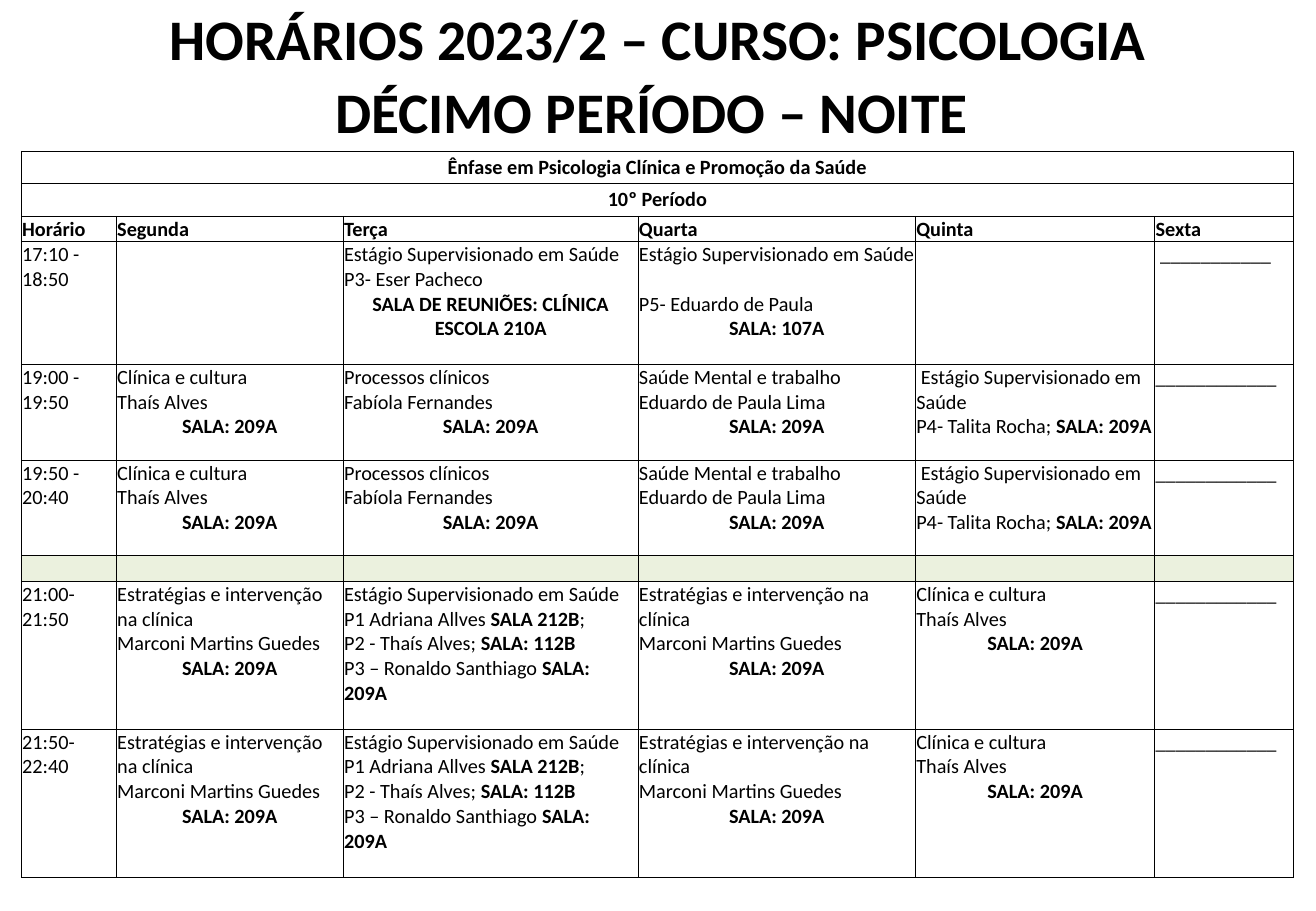
from dataclasses import dataclass

from lxml import etree
from pptx import Presentation
from pptx.dml.color import RGBColor
from pptx.enum import text
from pptx.oxml import ns
from pptx.util import Pt


@dataclass(frozen=True)
class Theme:
    font: str = "Calibri"
    ink: RGBColor = RGBColor(0, 0, 0)
    pause: RGBColor = RGBColor(0xEB, 0xF1, 0xDE)
    title_size: float = 34
    cell_size: float = 12
    border: float = 0.5
    banner_insets: tuple = (4.5, 2.2, 4.5, 2.2)
    cell_insets: tuple = (0.5, 0.5, 0.5, 0)


class TimetableSlide:
    def __init__(self, deck, theme):
        self.theme = theme
        self.slide = deck.slides.add_slide(deck.slide_layouts[5])

    def style(self, run, size, bold):
        font = run.font
        font.name, font.size, font.bold = self.theme.font, Pt(size), bold
        font.color.rgb = self.theme.ink

    def title(self, lines, left, top, width, height):
        heading = self.slide.shapes.title
        heading.left, heading.top = Pt(left), Pt(top)
        heading.width, heading.height = Pt(width), Pt(height)
        frame = heading.text_frame
        frame.text = "\n".join(lines)
        frame.word_wrap = True
        frame.auto_size = text.MSO_AUTO_SIZE.NONE
        frame.vertical_anchor = text.MSO_ANCHOR.MIDDLE
        for paragraph in frame.paragraphs:
            paragraph.alignment = text.PP_ALIGN.CENTER
            paragraph.line_spacing = 0.9
            paragraph.space_before, paragraph.space_after = Pt(0), Pt(6)
            for run in paragraph.runs:
                self.style(run, self.theme.title_size, True)

    def table(self, left, top, widths, heights):
        grid = self.slide.shapes.add_table(
            len(heights), len(widths), Pt(left), Pt(top),
            Pt(sum(widths)), Pt(sum(heights))).table
        grid.first_row = grid.horz_banding = False
        for column, width in zip(grid.columns, widths):
            column.width = Pt(width)
        for row, height in zip(grid.rows, heights):
            row.height = Pt(height)
        for cell in grid.iter_cells():
            cell.fill.background()
            self.borders(cell)
            self.insets(cell, self.theme.cell_insets)
        return grid

    def insets(self, cell, sides):
        (cell.margin_left, cell.margin_top,
         cell.margin_right, cell.margin_bottom) = map(Pt, sides)

    def borders(self, cell):
        properties = cell._tc.get_or_add_tcPr()
        for place, side in enumerate(("lnL", "lnR", "lnT", "lnB")):
            line = etree.Element(ns.qn(f"a:{side}"), w=str(Pt(self.theme.border)))
            fill = etree.SubElement(line, ns.qn("a:solidFill"))
            etree.SubElement(fill, ns.qn("a:srgbClr"), val=str(self.theme.ink))
            properties.insert(place, line)

    def cell(self, cell, lines, align=text.PP_ALIGN.LEFT):
        """Write paragraphs; asterisks enclose bold words, room lines are centred."""
        size = self.theme.cell_size
        frame = cell.text_frame
        for number, line in enumerate(lines):
            paragraph = frame.add_paragraph() if number else frame.paragraphs[0]
            is_room = line.startswith("*SALA")
            paragraph.alignment = text.PP_ALIGN.CENTER if is_room else align
            plain, *others = line.split("*")
            paragraph.text = plain
            for run in paragraph.runs:
                self.style(run, size, False)
            for position, words in enumerate(others):
                if words:
                    run = paragraph.add_run()
                    run.text = words
                    self.style(run, size, position % 2 == 0)
            # Line breaks take the size of the text around them
            for line_break in paragraph._p.findall(ns.qn("a:br")):
                etree.SubElement(line_break, ns.qn("a:rPr"), sz=str(size * 100))
        if not lines:
            etree.SubElement(frame.paragraphs[0]._p, ns.qn("a:endParaRPr"),
                             sz=str(size * 100))

    def banner(self, grid, row, words):
        first = grid.cell(row, 0)
        first.merge(grid.cell(row, len(grid.columns) - 1))
        self.insets(first, self.theme.banner_insets)
        self.cell(first, [f"*{words}*"], text.PP_ALIGN.CENTER)

    def header(self, grid, row, names):
        for column, name in enumerate(names):
            heading = grid.cell(row, column)
            heading.vertical_anchor = text.MSO_ANCHOR.BOTTOM
            self.cell(heading, [f"*{name}*"])

    def lessons(self, grid, row, entries):
        for column, lines in enumerate(entries):
            self.cell(grid.cell(row, column), lines)

    def pause(self, grid, row):
        for column in range(len(grid.columns)):
            gap = grid.cell(row, column)
            gap.fill.solid()
            gap.fill.fore_color.rgb = self.theme.pause
            self.cell(gap, [])


# Lessons
ROOM = "*SALA: 209A*"
FREE = ["____________"]
CULTURE = ["Clínica e cultura\nThaís Alves", ROOM]
PROCESSES = ["Processos clínicos\nFabíola Fernandes", ROOM]
WORK = ["Saúde Mental e trabalho\nEduardo de Paula Lima", ROOM]
STRATEGIES = ["Estratégias e intervenção na clínica\nMarconi Martins Guedes", ROOM]
PLACEMENT = "Estágio Supervisionado em Saúde \n"
PLACEMENT_P3 = [PLACEMENT + "P3- Eser Pacheco",
                "*SALA DE REUNIÕES: CLÍNICA ESCOLA 210A*"]
PLACEMENT_P4 = [" " + PLACEMENT + "P4- Talita Rocha; " + ROOM]
PLACEMENT_P5 = [PLACEMENT + "P5- Eduardo de Paula", "*SALA: 107A*"]
PLACEMENT_GROUPS = [PLACEMENT + "P1 Adriana Allves *SALA 212B*;",
                    "P2 - Thaís Alves; *SALA: 112B*",
                    "P3 – Ronaldo Santhiago " + ROOM]

EARLY = [CULTURE, PROCESSES, WORK, PLACEMENT_P4, FREE]
LATE = [STRATEGIES, PLACEMENT_GROUPS, STRATEGIES, CULTURE, FREE]
SCHEDULE = {
    3: [["17:10 - 18:50"], [], PLACEMENT_P3, PLACEMENT_P5, [], [" ___________"]],
    4: [["19:00 - 19:50"], *EARLY],
    5: [["19:50 - 20:40"], *EARLY],
    7: [["21:00-21:50"], *LATE],
    8: [["21:50-22:40"], *LATE],
}


def main():
    deck = Presentation()
    deck.slide_width, deck.slide_height = Pt(780), Pt(540)
    page = TimetableSlide(deck, Theme())

    # Title
    page.title(["HORÁRIOS 2023/2 – CURSO: PSICOLOGIA", "DÉCIMO PERÍODO – NOITE "],
               39, 1.5, 702, 90)

    # Timetable
    grid = page.table(12.7, 89.6, [56.3, 134.5, 174.8, 164.4, 141.9, 82.1],
                      [19.3, 19.3, 14.9, 72.8, 56.7, 56.7, 14.9, 87.7, 87.7])
    page.banner(grid, 0, "Ênfase em Psicologia Clínica e Promoção da Saúde")
    page.banner(grid, 1, "10º Período")
    page.header(grid, 2, ["Horário", "Segunda", "Terça", "Quarta", "Quinta", "Sexta"])
    for row, entries in SCHEDULE.items():
        page.lessons(grid, row, entries)
    page.pause(grid, 6)

    deck.save("out.pptx")


if __name__ == "__main__":
    main()
